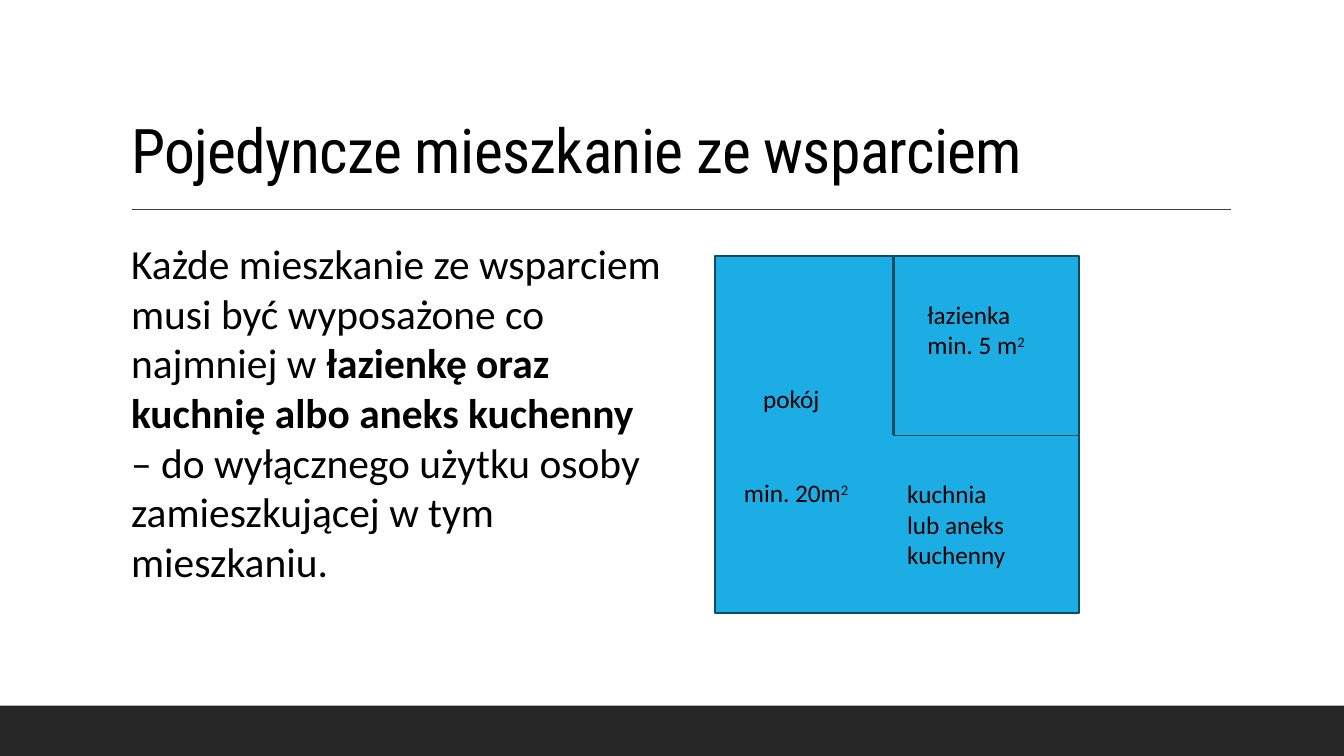
from pptx import Presentation
from pptx.dml.color import RGBColor as Rgb
from pptx.enum.shapes import MSO_CONNECTOR as Conn, MSO_SHAPE as Geo
from pptx.enum.text import MSO_ANCHOR as Anchor, MSO_AUTO_SIZE as Fit, PP_ALIGN as Align
from pptx.oxml.ns import qn
from pptx.util import Inches, Pt
from lxml import etree

BLACK, SKY, NAVY = "000000", "1CADE4", "0C4C64"


def color(code):
    return Rgb.from_string(code)


def place(shape, left, top, width, height):
    shape.left, shape.top = Inches(left), Inches(top)
    shape.width, shape.height = Inches(width), Inches(height)


def style(para, size, name="Calibri"):
    para.alignment = Align.LEFT
    para.font.size = Pt(size)
    para.font.name = name
    para.font.color.rgb = color(BLACK)


def add_block(slide, kind, box, fill, line=None):
    shape = slide.shapes.add_shape(kind, *map(Inches, box))
    shape.shadow.inherit = False
    shape.fill.solid()
    shape.fill.fore_color.rgb = color(fill)
    if line:
        shape.line.color.rgb = color(line)
        shape.line.width = Pt(1.25)
    else:
        shape.line.fill.background()


def add_rule(slide, left, right, y):
    rule = slide.shapes.add_connector(
        Conn.STRAIGHT, Inches(left), Inches(y), Inches(right), Inches(y))
    rule.line.color.rgb = color("404040")
    rule.line.width = Pt(1)
    etree.SubElement(rule._element.spPr, qn("a:effectLst"))


def add_label(slide, box, lines, power=None):
    frame = slide.shapes.add_textbox(*map(Inches, box)).text_frame
    frame.word_wrap = True
    for i, line in enumerate(lines):
        para = frame.paragraphs[0] if i == 0 else frame.add_paragraph()
        para.add_run().text = line
        style(para, 18)
    if power:
        run = para.add_run()
        run.text = power
        run.font._element.set("baseline", "30000")


def set_title(shape, text):
    place(shape, 1.2, 0.31, 11, 1.59)
    frame = shape.text_frame
    frame.auto_size = Fit.NONE
    frame.vertical_anchor = Anchor.BOTTOM
    para = frame.paragraphs[0]
    run = para.add_run()
    run.text = text
    run.font._element.set("spc", "-50")
    style(para, 44, "Roboto Condensed")
    para.line_spacing = 0.9


def set_body(shape, parts):
    place(shape, 1.2, 2.31, 5.37, 4.11)
    frame = shape.text_frame
    frame.auto_size = Fit.NONE
    frame.margin_left = frame.margin_right = 0
    para = frame.paragraphs[0]
    for text, bold in parts:
        run = para.add_run()
        run.text = text
        run.font.bold = bold
    style(para, 29.6)
    para.space_before, para.space_after = Pt(2), Pt(4)
    # Plain paragraph without a bullet
    props = para._p.get_or_add_pPr()
    props.set("marL", str(Inches(0.1)))
    props.set("indent", "0")
    props.insert_element_before(
        props.makeelement(qn("a:buNone"), {}), "a:tabLst", "a:defRPr", "a:extLst")


def main():
    deck = Presentation()
    deck.slide_width, deck.slide_height = Inches(13.33), Inches(7.5)
    slide = deck.slides.add_slide(deck.slide_layouts[1])

    # Footer band and title rule
    add_block(slide, Geo.RECTANGLE, (0, 7, 13.33, 0.5), "262626")
    add_rule(slide, 1.31, 12.21, 2.08)

    # Title and body
    set_title(slide.shapes.title, "Pojedyncze mieszkanie ze wsparciem")
    set_body(slide.placeholders[1], [
        ("Każde mieszkanie ze wsparciem musi być wyposażone co najmniej w ", False),
        ("łazienkę oraz kuchnię albo aneks kuchenny ", True),
        ("– do wyłącznego użytku osoby zamieszkującej w tym mieszkaniu.", False),
    ])

    # Floor plan
    add_block(slide, Geo.CORNER, (7.09, 2.54, 3.61, 3.54), SKY, NAVY)
    add_block(slide, Geo.RECTANGLE, (8.87, 2.54, 1.83, 1.78), SKY, NAVY)

    # Room labels
    add_label(slide, (7.47, 3.75, 1.41, 0.4), ["pokój"])
    add_label(slide, (8.9, 4.7, 1.76, 1.01), ["kuchnia", "lub aneks kuchenny"])
    add_label(slide, (9.1, 2.92, 1.41, 0.71), ["łazienka", "min. 5 m"], "2")
    add_label(slide, (7.28, 4.69, 1.62, 0.4), ["min. 20m"], "2")

    deck.save("out.pptx")


if __name__ == "__main__":
    main()
